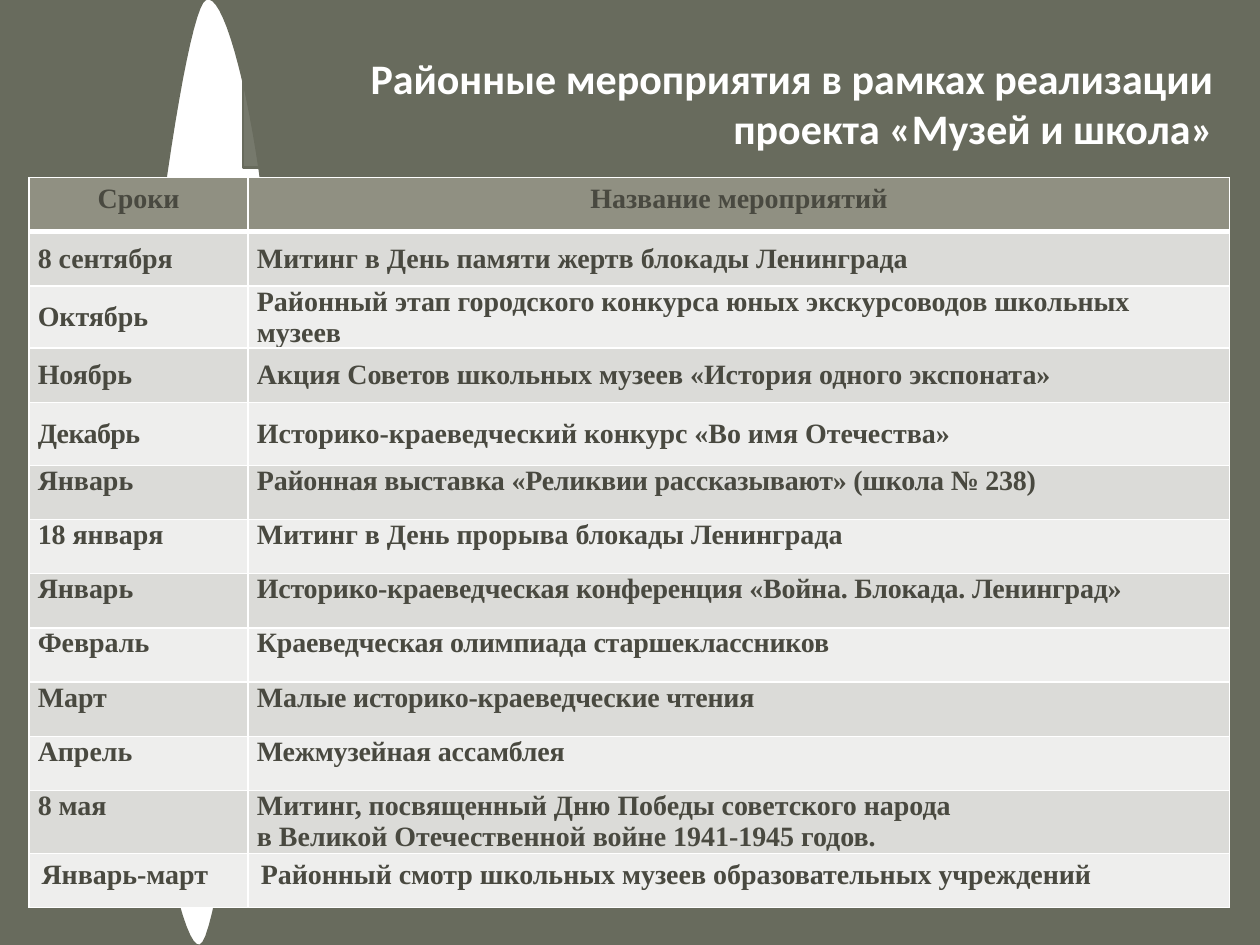
from lxml.etree import SubElement
from pptx import Presentation
from pptx.dml.color import RGBColor
from pptx.enum.shapes import MSO_SHAPE as Shape
from pptx.enum.text import MSO_ANCHOR as Anchor, PP_ALIGN as Align
from pptx.oxml.ns import qn
from pptx.util import Inches, Pt

OLIVE = RGBColor(0x68, 0x6B, 0x5D)
WHITE = RGBColor(0xFF, 0xFF, 0xFF)
INK = RGBColor(0x49, 0x49, 0x40)
HEADER = RGBColor(0x90, 0x90, 0x82)
BANDS = [RGBColor(0xEE, 0xEE, 0xED), RGBColor(0xDB, 0xDB, 0xD8)]

EVENTS = [
    ("Сроки", 0, "Название мероприятий", 0),
    ("8 сентября", 0, "Митинг в День памяти жертв блокады Ленинграда", 0),
    ("Октябрь", 0, "Районный этап городского конкурса юных экскурсоводов школьных музеев", 0),
    ("Ноябрь", 0, "Акция Советов школьных музеев «История одного экспоната»", 0),
    ("Декабрь", -30, "Историко-краеведческий конкурс «Во имя Отечества»", 0),
    ("Январь", 0, "Районная выставка «Реликвии рассказывают» (школа № 238)", -10),
    ("18 января", 0, "Митинг в День прорыва блокады Ленинграда", 0),
    ("Январь", 0, "Историко-краеведческая конференция «Война. Блокада. Ленинград»", -10),
    ("Февраль", 0, "Краеведческая олимпиада старшеклассников", -10),
    ("Март", 0, "Малые историко-краеведческие чтения", -10),
    ("Апрель", 0, "Межмузейная ассамблея", -10),
    ("8 мая", 0, "Митинг, посвященный Дню Победы советского народа\n"
                 "в Великой Отечественной войне 1941-1945 годов.", 0),
    ("Январь-март", 0, "Районный смотр школьных музеев образовательных учреждений", 0),
]
LAST = len(EVENTS) - 1
TALL_ROWS = (4, 11)


def add_run(paragraph, text, font_name, size, color):
    run = paragraph.add_run()
    run.text = text
    run.font.name = font_name
    run.font.size = Pt(size)
    run.font.bold = True
    run.font.color.rgb = color
    return run


def add_border(cell, side, width):
    line = SubElement(cell._tc.get_or_add_tcPr(), qn(f"a:ln{side}"), w=str(Pt(width)))
    fill = SubElement(line, qn("a:solidFill"))
    SubElement(fill, qn("a:srgbClr"), val=str(WHITE))


prs = Presentation()
prs.slide_width, prs.slide_height = Inches(10), Inches(7.5)
slide = prs.slides.add_slide(prs.slide_layouts[6])
slide.background.fill.solid()
slide.background.fill.fore_color.rgb = OLIVE

curves = [
    [(1.61, 0.02), (1.43, 0.29), (1.06, 3.05), (1.06, 4.29)],
    [(1.06, 4.29), (1.06, 5.54), (1.43, 7.75), (1.61, 7.48)],
    [(1.61, 7.48), (1.8, 7.21), (2.16, 3.9), (2.16, 2.66)],
    [(2.16, 2.66), (2.16, 1.42), (1.8, -0.25), (1.61, 0.02)],
]
STEPS = 24
leaf_points = []
for curve in curves:
    for step in range(1, STEPS + 1):
        t = step / STEPS
        weights = [(1 - t) ** 3, 3 * t * (1 - t) ** 2, 3 * t ** 2 * (1 - t), t ** 3]
        leaf_points.append(tuple(
            Inches(sum(w * point[axis] for w, point in zip(weights, curve))) for axis in (0, 1)))
outline = slide.shapes.build_freeform(*leaf_points[-1])
outline.add_line_segments(leaf_points[:-1], close=True)
leaf = outline.convert_to_shape()
leaf.shadow.inherit = False
leaf.fill.solid()
leaf.fill.fore_color.rgb = WHITE
leaf.line.color.rgb = OLIVE
leaf.line.width = Pt(0.75)

title = slide.shapes.add_shape(
    Shape.RECTANGLE, Inches(1.93), Inches(0.3), Inches(7.8), Inches(1.03))
title.shadow.inherit = False
title.fill.solid()
title.fill.fore_color.rgb = OLIVE
title_color = title.fill._xPr.find(qn("a:solidFill")).find(qn("a:srgbClr"))
SubElement(title_color, qn("a:alpha"), val="90000")
title.line.color.rgb = OLIVE
title.line.width = Pt(1.5)
title.text_frame.word_wrap = True
title.text_frame.vertical_anchor = Anchor.MIDDLE
heading = title.text_frame.paragraphs[0]
heading.alignment = Align.RIGHT
add_run(heading, "Районные мероприятия в рамках реализации проекта «Музей и школа»",
        "Calibri", 24, WHITE)

schedule = slide.shapes.add_table(
    len(EVENTS), 2, Inches(0.23), Inches(1.41), Inches(9.53), Inches(5.73)).table
schedule.columns[0].width = Inches(1.74)
schedule.columns[1].width = Inches(7.79)

for row, (date, date_spacing, event, event_spacing) in enumerate(EVENTS):
    schedule.rows[row].height = Inches(0.5 if row in TALL_ROWS else 0.43)
    for col, (text, spacing) in enumerate([(date, date_spacing), (event, event_spacing)]):
        cell = schedule.cell(row, col)
        for side in "LRTB":
            under_header = (row, side) in ((0, "B"), (1, "T"))
            add_border(cell, side, 3 if under_header else 1)
        cell.fill.solid()
        cell.fill.fore_color.rgb = BANDS[row % 2] if row else HEADER
        if 0 < row < LAST:
            cell.margin_left = cell.margin_right = Inches(0.07)
            cell.margin_top = cell.margin_bottom = 0
        cell.vertical_anchor = Anchor.MIDDLE if 1 <= row <= 4 else Anchor.TOP
        paragraph = cell.text_frame.paragraphs[0]
        paragraph.alignment = Align.LEFT if row else Align.CENTER
        for number, line in enumerate(text.split("\n")):
            if number:
                paragraph.add_line_break()
            run = add_run(paragraph, line, "Times New Roman", 16, INK)
            if spacing:
                run.font._element.set("spc", str(spacing))

prs.save("out.pptx")
